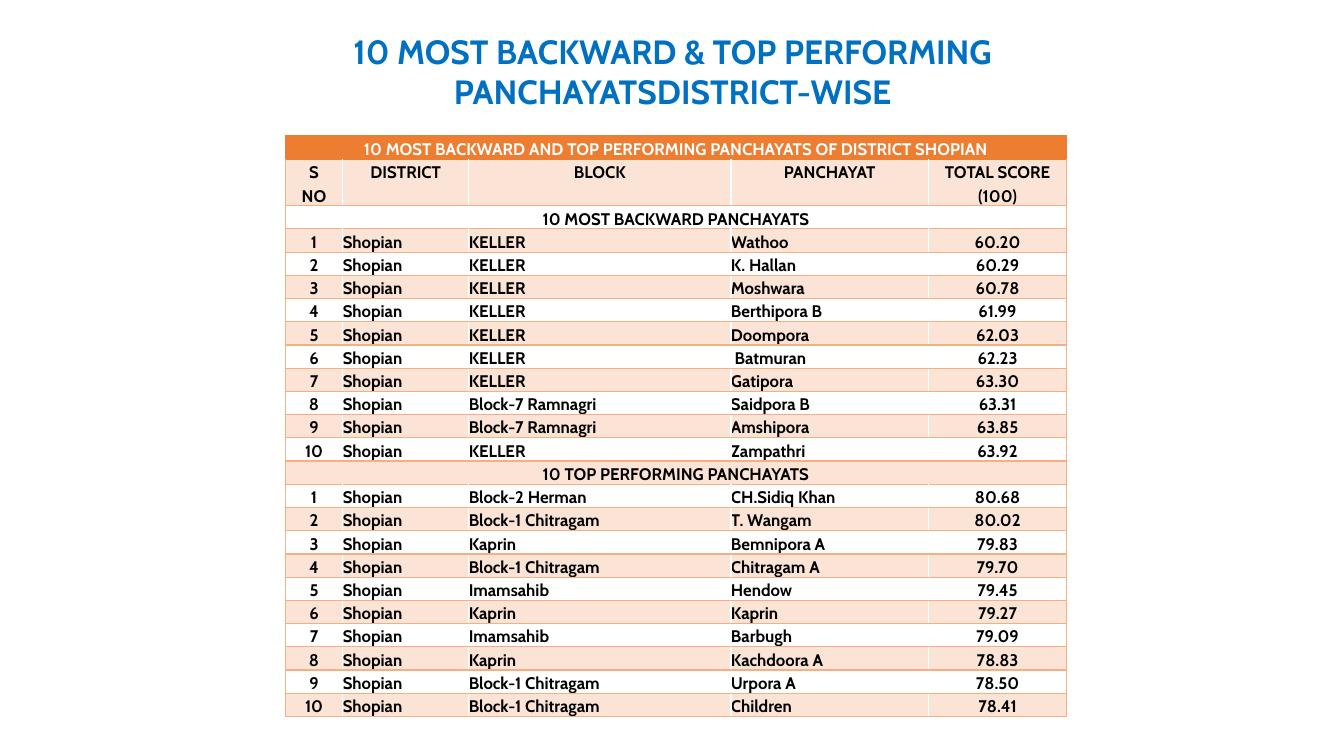
from dataclasses import dataclass

from lxml import etree
from pptx import Presentation
from pptx import util as u
from pptx.dml.color import RGBColor
from pptx.enum import text
from pptx.oxml import ns


@dataclass(frozen=True)
class Theme:
    font: str = "Cabin"
    heading: str = "0070C0"
    banner: str = "ED7D31"
    band: str = "FBE4D5"
    rule: str = "F4B083"
    light: str = "FFFFFF"
    ink: str = "000000"
    heading_size: int = 24
    table_size: int = 12


HEADING = "10 MOST BACKWARD & TOP PERFORMING PANCHAYATSDISTRICT-WISE"
BANNER = "10 MOST BACKWARD AND TOP PERFORMING PANCHAYATS OF DISTRICT SHOPIAN"
COLUMN_HEADS = ["S\nNO", "DISTRICT", "BLOCK", "PANCHAYAT", "TOTAL SCORE\n(100)"]
COLUMN_WIDTHS = [0.57, 1.25, 2.6, 1.96, 1.37]
ROW_HEIGHT, HEAD_HEIGHT = 0.21, 0.44
DISTRICT = "Shopian"
BACKWARD = [
    ("KELLER", "Wathoo", "60.20"),
    ("KELLER", "K. Hallan", "60.29"),
    ("KELLER", "Moshwara", "60.78"),
    ("KELLER", "Berthipora B", "61.99"),
    ("KELLER", "Doompora", "62.03"),
    ("KELLER", " Batmuran", "62.23"),
    ("KELLER", "Gatipora", "63.30"),
    ("Block-7 Ramnagri", "Saidpora B", "63.31"),
    ("Block-7 Ramnagri", "Amshipora", "63.85"),
    ("KELLER", "Zampathri", "63.92"),
]
TOP = [
    ("Block-2 Herman", "CH.Sidiq Khan", "80.68"),
    ("Block-1 Chitragam", "T. Wangam", "80.02"),
    ("Kaprin", "Bemnipora A", "79.83"),
    ("Block-1 Chitragam", "Chitragam A", "79.70"),
    ("Imamsahib", "Hendow", "79.45"),
    ("Kaprin", "Kaprin", "79.27"),
    ("Imamsahib", "Barbugh", "79.09"),
    ("Kaprin", "Kachdoora A", "78.83"),
    ("Block-1 Chitragam", "Urpora A", "78.50"),
    ("Block-1 Chitragam", "Children", "78.41"),
]


def write(frame, wording, *, font, size, color, centered=True, spacing=None):
    frame.text = wording
    for paragraph in frame.paragraphs:
        paragraph.alignment = text.PP_ALIGN.CENTER if centered else text.PP_ALIGN.LEFT
        paragraph.line_spacing = spacing
        for run in paragraph.runs:
            run.font.name = font
            run.font.size = u.Pt(size)
            run.font.bold = True
            run.font.color.rgb = RGBColor.from_string(color)


def numbered(panchayats):
    return [[str(rank), DISTRICT, *entry] for rank, entry in enumerate(panchayats, 1)]


class RankingSlide:
    """Holds the theme and the slide, and adds each kind of element."""

    def __init__(self, deck, theme):
        self.theme = theme
        self.slide = deck.slides.add_slide(deck.slide_layouts[5])

    def heading(self, wording, left, top, width, height):
        title = self.slide.shapes.title
        title.left, title.top = u.Inches(left), u.Inches(top)
        title.width, title.height = u.Inches(width), u.Inches(height)
        frame = title.text_frame
        frame.word_wrap = True
        frame.auto_size = text.MSO_AUTO_SIZE.SHAPE_TO_FIT_TEXT
        frame.vertical_anchor = text.MSO_ANCHOR.MIDDLE
        frame.margin_left = frame.margin_right = u.Inches(0.05)
        frame.margin_top = frame.margin_bottom = u.Inches(0.05)
        write(frame, wording, font=self.theme.font,
              size=self.theme.heading_size, color=self.theme.heading)

    def borders(self, cell, **edges):
        properties = cell._tc.get_or_add_tcPr()
        for side in "LRTB":
            line = etree.SubElement(properties, ns.qn(f"a:ln{side}"), w=str(u.Pt(1)))
            fill = etree.SubElement(line, ns.qn("a:solidFill"))
            etree.SubElement(fill, ns.qn("a:srgbClr"), val=edges[side])

    def cell(self, cell, wording, *, fill, edges, color, centered):
        self.borders(cell, **edges)
        if fill:
            cell.fill.solid()
            cell.fill.fore_color.rgb = RGBColor.from_string(fill)
        else:
            cell.fill.background()
        cell.margin_left = cell.margin_right = 0
        cell.margin_top = cell.margin_bottom = 0
        write(cell.text_frame, wording, font=self.theme.font, size=self.theme.table_size,
              color=color, centered=centered, spacing=1.15)

    def ranking(self, rows, left, top):
        theme, last = self.theme, len(COLUMN_WIDTHS) - 1
        heights = [HEAD_HEIGHT if row is COLUMN_HEADS else ROW_HEIGHT for row in rows]
        table = self.slide.shapes.add_table(
            len(rows), last + 1, u.Inches(left), u.Inches(top),
            u.Inches(sum(COLUMN_WIDTHS)), u.Inches(sum(heights))).table
        table.first_row = table.horz_banding = False
        for column, width in zip(table.columns, COLUMN_WIDTHS):
            column.width = u.Inches(width)
        for r, (row, height) in enumerate(zip(rows, heights)):
            table.rows[r].height = u.Inches(height)
            spans = len(row) == 1
            rule = theme.banner if r == 0 else theme.rule
            inner = rule if spans else theme.light
            fill = theme.banner if r == 0 else theme.band if r % 2 else None
            if spans:
                table.cell(r, 0).merge(table.cell(r, last))
            for c in range(last + 1):
                edges = {"L": inner if c else rule, "R": inner if c < last else rule,
                         "T": theme.banner if r < 2 else rule, "B": rule}
                self.cell(table.cell(r, c), row[c] if c < len(row) else "",
                          fill=fill, edges=edges,
                          color=theme.light if r == 0 else theme.ink,
                          centered=spans or row is COLUMN_HEADS or c in (0, last))


def main():
    deck = Presentation()
    deck.slide_width, deck.slide_height = u.Inches(13.33), u.Inches(7.5)
    page = RankingSlide(deck, Theme())
    page.heading(HEADING, 2.22, 0.25, 8.9, 0.91)
    page.ranking([[BANNER], COLUMN_HEADS,
                  ["10 MOST BACKWARD PANCHAYATS"], *numbered(BACKWARD),
                  ["10 TOP PERFORMING PANCHAYATS"], *numbered(TOP)], 2.83, 1.35)
    deck.save("out.pptx")


if __name__ == "__main__":
    main()
